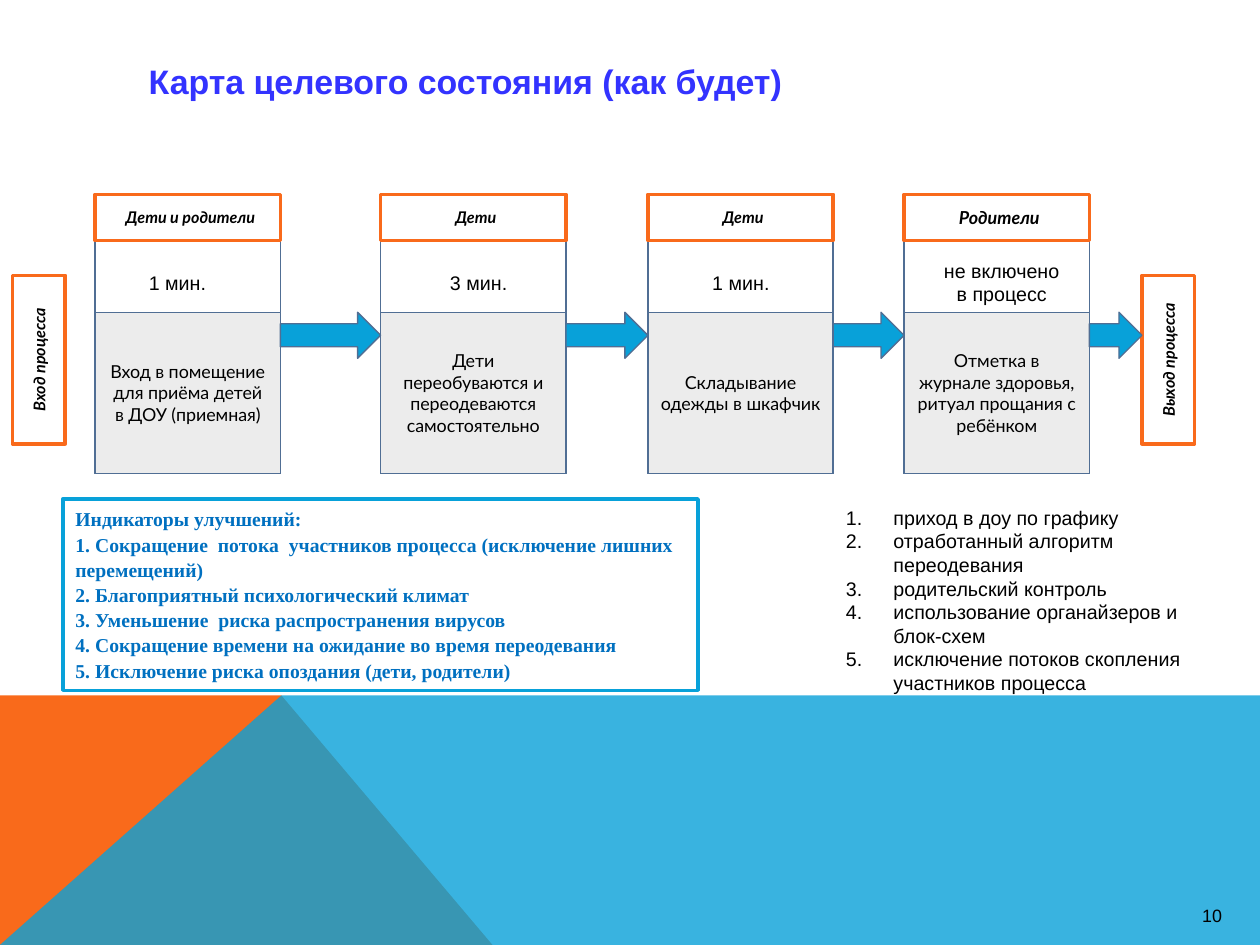
"""Builds the target state process map slide."""
from lxml import etree
from pptx import Presentation
from pptx import util as u
from pptx.dml import color
from pptx.enum import shapes, text
from pptx.oxml import ns

TITLE = "Карта целевого состояния (как будет)"
STEPS = [
    dict(left=1.88, who="Дети и родители", who_size=9, time=["1 мин."], time_shift=0.81,
         action="Вход в помещение для приёма детей в ДОУ (приемная)"),
    dict(left=7.52, who="Дети", who_size=9, time=["3 мин."], time_shift=1.12,
         action="Дети переобуваются и переодеваются самостоятельно"),
    dict(left=12.8, who="Дети", who_size=9, time=["1 мин."], time_shift=1.02,
         action="Складывание одежды в шкафчик"),
    dict(left=17.86, who="Родители", who_size=10, time=["не включено", "в процесс"],
         time_shift=0, action="Отметка в журнале здоровья, ритуал прощания с ребёнком"),
]
GATES = [(0.25, "Вход процесса"), (22.56, "Выход процесса")]
INDICATORS = [
    "Индикаторы улучшений:",
    "1. Сокращение  потока  участников процесса (исключение лишних перемещений)",
    "2. Благоприятный психологический климат",
    "3. Уменьшение  риска распространения вирусов",
    "4. Сокращение времени на ожидание во время переодевания",
    "5. Исключение риска опоздания (дети, родители)",
]
MEASURES = [
    "приход в доу по графику",
    "отработанный алгоритм переодевания",
    "родительский контроль",
    "использование органайзеров и блок-схем",
    "исключение потоков скопления участников процесса",
]
PAGE_NUMBER = "10"

PAGE_WIDTH, PAGE_HEIGHT = 24.89, 18.67
BAND_TOP, BAND_PEAK = 13.74, 5.56
STEP_WIDTH, STEP_TOP, STEP_BOTTOM = 3.66, 3.84, 9.35
WHO_HEIGHT, ACTION_TOP = 0.91, 6.17
ORANGE, BLUE, STEEL, WHITE = "F96A1B", "08A1D9", "506E94", "FFFFFF"
CENTER, LEFT = text.PP_ALIGN.CENTER, text.PP_ALIGN.LEFT
MIDDLE, TOP = text.MSO_ANCHOR.MIDDLE, text.MSO_ANCHOR.TOP
RECTANGLE, ARROW = shapes.MSO_SHAPE.RECTANGLE, shapes.MSO_SHAPE.RIGHT_ARROW

deck = Presentation()
deck.slide_width, deck.slide_height = u.Cm(PAGE_WIDTH), u.Cm(PAGE_HEIGHT)
page = deck.slides.add_slide(deck.slide_layouts[6])


def rgb(value):
    return color.RGBColor.from_string(value)


def paint(shape, fill, line=None, weight=0.75):
    shape.shadow.inherit = False
    shape.fill.solid()
    shape.fill.fore_color.rgb = rgb(fill)
    if line:
        shape.line.color.rgb = rgb(line)
        shape.line.width = u.Pt(weight)
    else:
        shape.line.fill.background()
    return shape


def add_block(kind, left, top, width, height, fill, line, weight=0.75):
    block = page.shapes.add_shape(kind, *map(u.Cm, (left, top, width, height)))
    return paint(block, fill, line, weight)


def add_box(left, top, width, height):
    return page.shapes.add_textbox(*map(u.Cm, (left, top, width, height)))


def add_band(points, fill):
    corners = [(u.Cm(x), u.Cm(y)) for x, y in points]
    builder = page.shapes.build_freeform(*corners[0])
    builder.add_line_segments(corners[1:], close=True)
    return paint(builder.convert_to_shape(), fill)


def write(box, lines, font="Arial", size=11, ink="000000", bold=False, italic=False,
          align=LEFT, anchor=TOP, insets=(0.25, 0.13, 0.25, 0.13), spacing=None, wrap=True):
    frame = box.text_frame
    frame.word_wrap, frame.vertical_anchor = wrap, anchor
    (frame.margin_left, frame.margin_top,
     frame.margin_right, frame.margin_bottom) = map(u.Cm, insets)
    for index, line in enumerate(lines):
        para = frame.paragraphs[0] if index == 0 else frame.add_paragraph()
        para.alignment, para.line_spacing = align, spacing
        span = para.add_run()
        span.text = line
        span.font.name, span.font.size = font, u.Pt(size)
        span.font.bold, span.font.italic = bold, italic
        span.font.color.rgb = rgb(ink)
    return frame


def number(frame, indent):
    for para in frame.paragraphs:
        props = para._p.get_or_add_pPr()
        props.set("marL", str(u.Cm(indent)))
        props.set("indent", str(-u.Cm(indent)))
        etree.SubElement(props, ns.qn("a:buFont"), typeface="+mj-lt")
        etree.SubElement(props, ns.qn("a:buAutoNum"), type="arabicPeriod")


def add_step(left, who, who_size, time, time_shift, action):
    add_block(RECTANGLE, left, STEP_TOP, STEP_WIDTH, STEP_BOTTOM - STEP_TOP, WHITE, STEEL)
    body = add_block(RECTANGLE, left, ACTION_TOP, STEP_WIDTH, STEP_BOTTOM - ACTION_TOP,
                     "ECECEC", STEEL)
    write(body, [action], font="Lato", size=10, align=CENTER, anchor=MIDDLE)
    header = add_block(RECTANGLE, left, STEP_TOP, STEP_WIDTH, WHO_HEIGHT, WHITE, ORANGE, 2)
    write(header, [who], font="Lato", size=who_size, bold=True, italic=True, align=CENTER,
          anchor=MIDDLE, insets=(0.2, 0.1, 0.1, 0.1))
    if len(time) > 1:
        label = add_box(left, 4.98, STEP_WIDTH, 1.19)
        write(label, time, align=CENTER, insets=(0.45, 0.13, 0.25, 0.13))
    else:
        write(add_box(left + time_shift, 5.23, 1.78, 0.74), time)


def add_gate(left, label):
    gate = add_block(RECTANGLE, left, 5.44, 1.04, 3.33, WHITE, ORANGE, 2)
    frame = write(gate, [label], font="Lato", size=9, bold=True, italic=True, align=CENTER,
                  anchor=MIDDLE, insets=(0.1,) * 4)
    frame._txBody.bodyPr.set("vert", "vert270")


def main():
    peak = (BAND_PEAK, BAND_TOP)
    add_band([(0, PAGE_HEIGHT), (0, BAND_TOP), peak, (9.73, PAGE_HEIGHT)], ORANGE)
    sea = add_band([(0, PAGE_HEIGHT), peak, (PAGE_WIDTH, BAND_TOP),
                    (PAGE_WIDTH, PAGE_HEIGHT)], BLUE)
    tint = sea._element.spPr.find(ns.qn("a:solidFill"))[0]
    etree.SubElement(tint, ns.qn("a:alpha"), val="80000")

    write(add_box(23.75, 17.88, 0.58, 0.43), [PAGE_NUMBER], size=10, insets=(0,) * 4,
          wrap=False)
    write(add_box(0.79, 1.07, 16.81, 1.07), [TITLE], size=19, ink="3333FF", bold=True,
          align=CENTER)

    for step in STEPS:
        add_step(**step)
    for left, label in GATES:
        add_gate(left, label)
    targets = [step["left"] for step in STEPS[1:]] + [GATES[1][0]]
    for step, target in zip(STEPS, targets):
        start = step["left"] + STEP_WIDTH
        add_block(ARROW, start, ACTION_TOP, target - start, 0.91, BLUE, STEEL)

    panel = add_block(RECTANGLE, 1.24, 9.86, 12.55, 3.78, WHITE, BLUE, 2)
    write(panel, INDICATORS, font="Times New Roman", ink="0070C0", bold=True, spacing=1.07)
    number(write(add_box(16.46, 9.86, 7.54, 3.9), MEASURES), 0.94)
    deck.save("out.pptx")


if __name__ == "__main__":
    main()
